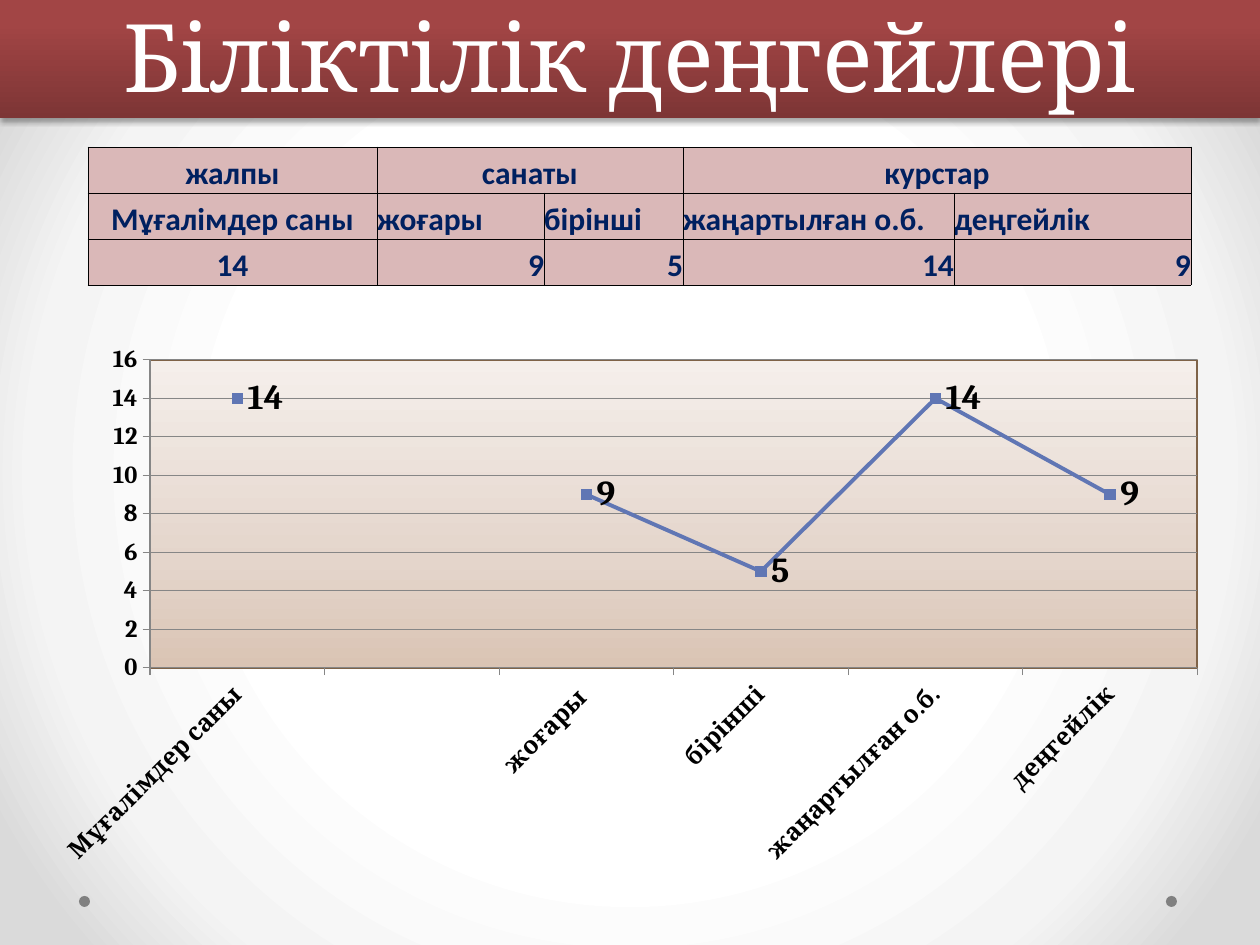
from dataclasses import dataclass

from lxml import etree
from pptx import Presentation
from pptx import util as u
from pptx.chart.data import CategoryChartData
from pptx.dml.color import RGBColor
from pptx.enum import chart as ch
from pptx.enum import shapes, text
from pptx.oxml import parse_xml
from pptx.oxml.ns import nsdecls, qn

SCALE = 914400 / 126
LEFT, CENTER, RIGHT = text.PP_ALIGN.LEFT, text.PP_ALIGN.CENTER, text.PP_ALIGN.RIGHT


@dataclass
class Box:
    left: int
    top: int
    width: int
    height: int

    def emu(self) -> list[u.Emu]:
        return [px(v) for v in (self.left, self.top, self.width, self.height)]


@dataclass
class Entry:
    label: str
    align: text.PP_ALIGN = CENTER
    columns: int = 1


TITLE = Box(0, 0, 1260, 118)
CHART = Box(39, 335, 1182, 542)
PLOT = Box(150, 360, 1047, 308)
TABLE = Box(88, 147, 1103, 138)
DOTS = [Box(left, 896, 11, 11) for left in (79, 1166)]
COLUMNS = [289, 167, 139, 271, 237]
ROWS = [
    [Entry("жалпы"), Entry("санаты", columns=2), Entry("курстар", columns=2)],
    [Entry("Мұғалімдер саны")]
    + [Entry(label, LEFT) for label in ("жоғары", "бірінші", "жаңартылған о.б.", "деңгейлік")],
    [Entry("14")] + [Entry(label, RIGHT) for label in ("9", "5", "14", "9")],
]
CATEGORIES = ["Мұғалімдер саны", "", "жоғары ", "бірінші", "жаңартылған о.б.", "деңгейлік"]
VALUES = [14, None, 9, 5, 14, 9]


def px(value: int) -> u.Emu:
    return u.Emu(round(value * SCALE))


def color(code: str) -> RGBColor:
    return RGBColor.from_string(code)


def style_font(font, name: str, size: int, code: str, bold: bool = False) -> None:
    font.name, font.size, font.bold = name, u.Pt(size), bold
    font.color.rgb = color(code)


def gradient(stops: list[tuple[int, str]], direction: str) -> etree._Element:
    marks = "".join(
        f'<a:gs pos="{position * 1000}"><a:srgbClr val="{code}"/></a:gs>' for position, code in stops
    )
    return parse_xml(
        f'<a:gradFill {nsdecls("a")} rotWithShape="1"><a:gsLst>{marks}</a:gsLst>{direction}</a:gradFill>'
    )


UPWARD = '<a:lin ang="16200000" scaled="0"/>'
RADIAL = '<a:path path="circle"><a:fillToRect l="50000" t="50000" r="50000" b="50000"/></a:path>'


def replace_solid(properties, fill, new_fill: etree._Element) -> None:
    fill.solid()
    properties.replace(properties.find(qn("a:solidFill")), new_fill)


def paint_background(slide) -> None:
    fill = slide.background.fill
    properties = slide.element.find(".//" + qn("p:bgPr"))
    replace_solid(properties, fill, gradient([(50, "FFFFFF"), (76, "F4F4F4"), (92, "DADADA")], RADIAL))


def add_dot(slide, box: Box) -> None:
    dot = slide.shapes.add_shape(shapes.MSO_SHAPE.OVAL, *box.emu())
    dot.shadow.inherit = False
    dot.fill.solid()
    dot.fill.fore_color.rgb = color("808080")
    dot.line.fill.background()


def add_title(slide) -> None:
    banner = slide.shapes.add_shape(shapes.MSO_SHAPE.RECTANGLE, *TITLE.emu())
    banner.shadow.inherit = False
    properties = banner.element.spPr
    stops = [(0, "7D3535"), (80, "A24545"), (100, "A44343")]
    replace_solid(properties, banner.fill, gradient(stops, UPWARD))
    banner.line.fill.background()
    properties.find(qn("a:effectLst")).append(parse_xml(
        f'<a:outerShdw {nsdecls("a")} blurRad="{u.Pt(3.1)}" dist="{u.Pt(1.8)}" dir="5400000" '
        'rotWithShape="0"><a:srgbClr val="000000"><a:alpha val="35000"/></a:srgbClr></a:outerShdw>'
    ))
    frame = banner.text_frame
    frame.word_wrap = True
    frame.vertical_anchor = text.MSO_ANCHOR.BOTTOM
    frame.text = "Біліктілік деңгейлері"
    paragraph = frame.paragraphs[0]
    paragraph.alignment = CENTER
    paragraph.line_spacing = u.Pt(58)
    style_font(paragraph.runs[0].font, "Cambria", 54, "FFFFFF")


def style_axis(axis) -> None:
    style_font(axis.tick_labels.font, "Cambria", 14, "000000", True)
    axis.format.line.color.rgb = color("868686")
    axis.major_tick_mark = ch.XL_TICK_MARK.OUTSIDE


def style_plot_area(chart) -> None:
    area = chart.element.find(".//" + qn("c:plotArea"))
    for layout in area.findall(qn("c:layout")):
        area.remove(layout)
    fractions = {
        "x": (PLOT.left - CHART.left) / CHART.width,
        "y": (PLOT.top - CHART.top) / CHART.height,
        "w": PLOT.width / CHART.width,
        "h": PLOT.height / CHART.height,
    }
    modes = '<c:layoutTarget val="inner"/><c:xMode val="edge"/><c:yMode val="edge"/>'
    sizes = "".join(f'<c:{key} val="{value:.3f}"/>' for key, value in fractions.items())
    area.insert(0, parse_xml(
        f'<c:layout {nsdecls("c")}><c:manualLayout>{modes}{sizes}</c:manualLayout></c:layout>'
    ))
    properties = parse_xml(
        f'<c:spPr {nsdecls("c", "a")}><a:ln w="12700"><a:solidFill>'
        '<a:srgbClr val="7F6348"/></a:solidFill></a:ln></c:spPr>'
    )
    properties.insert(0, gradient([(0, "DAC4B4"), (35, "E4D5CB"), (100, "F5EFEB")], UPWARD))
    area.append(properties)


def add_line_chart(slide) -> None:
    data = CategoryChartData()
    data.categories = CATEGORIES
    data.add_series("Series 1", VALUES)
    chart = slide.shapes.add_chart(ch.XL_CHART_TYPE.LINE_MARKERS_STACKED, *CHART.emu(), data).chart
    chart.has_legend = chart.has_title = False
    style_font(chart.font, "Cambria", 14, "000000", True)
    category_axis, value_axis = chart.category_axis, chart.value_axis
    for axis in (category_axis, value_axis):
        style_axis(axis)
    category_text = chart.element.find(f'.//{qn("c:catAx")}/{qn("c:txPr")}')
    category_text.find(qn("a:bodyPr")).set("rot", "-2700000")
    value_axis.minimum_scale, value_axis.maximum_scale, value_axis.major_unit = 0, 16, 2
    value_axis.has_major_gridlines = True
    value_axis.major_gridlines.format.line.color.rgb = color("868686")
    plot = chart.plots[0]
    plot.vary_by_categories = False
    series = plot.series[0]
    series.smooth = False
    series.format.line.width = u.Pt(2.25)
    series.format.line.color.rgb = color("6076B4")
    marker = series.marker
    marker.style, marker.size = ch.XL_MARKER_STYLE.SQUARE, 6
    marker.format.fill.solid()
    marker.format.fill.fore_color.rgb = color("6076B4")
    marker.format.line.fill.background()
    labels = series.data_labels
    labels.show_value = True
    labels.position = ch.XL_LABEL_POSITION.RIGHT
    style_font(labels.font, "Cambria", 20, "000000", True)
    style_plot_area(chart)


def style_cell(cell) -> None:
    properties = cell._tc.get_or_add_tcPr()
    for side in ("lnL", "lnR", "lnT", "lnB"):
        properties.append(parse_xml(
            f'<a:{side} {nsdecls("a")} w="6350"><a:solidFill>'
            f'<a:srgbClr val="000000"/></a:solidFill></a:{side}>'
        ))
    cell.fill.solid()
    cell.fill.fore_color.rgb = color("DAB8B8")
    cell.margin_left = cell.margin_right = cell.margin_top = cell.margin_bottom = 0
    cell.vertical_anchor = text.MSO_ANCHOR.BOTTOM


def add_levels_table(slide) -> None:
    table = slide.shapes.add_table(len(ROWS), len(COLUMNS), *TABLE.emu()).table
    table.first_row = table.horz_banding = False
    for column, width in zip(table.columns, COLUMNS):
        column.width = px(width)
    for cell in table.iter_cells():
        style_cell(cell)
    for row, entries in enumerate(ROWS):
        table.rows[row].height = px(TABLE.height // len(ROWS))
        column = 0
        for entry in entries:
            cell = table.cell(row, column)
            if entry.columns > 1:
                cell.merge(table.cell(row, column + entry.columns - 1))
            cell.text_frame.text = entry.label
            paragraph = cell.text_frame.paragraphs[0]
            paragraph.alignment = entry.align
            style_font(paragraph.runs[0].font, "Calibri", 18, "002060", True)
            column += entry.columns


def main() -> None:
    presentation = Presentation()
    presentation.slide_width, presentation.slide_height = px(1260), px(945)
    slide = presentation.slides.add_slide(presentation.slide_layouts[6])
    paint_background(slide)
    for box in DOTS:
        add_dot(slide, box)
    add_title(slide)
    add_line_chart(slide)
    add_levels_table(slide)
    presentation.save("out.pptx")


if __name__ == "__main__":
    main()
